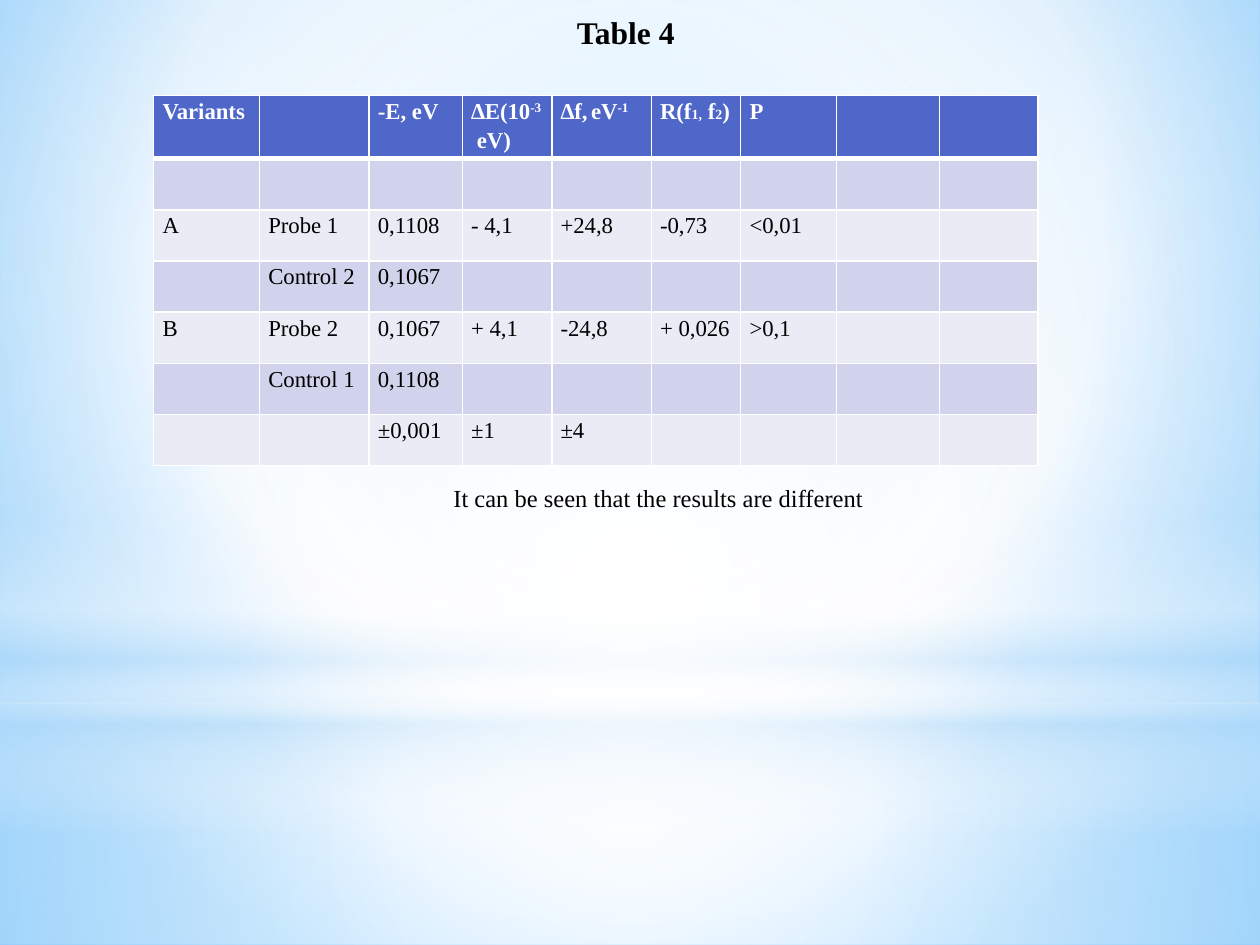
from lxml import etree
from pptx import Presentation
from pptx.dml.color import RGBColor
from pptx.enum.shapes import MSO_SHAPE
from pptx.enum.text import MSO_ANCHOR, PP_ALIGN
from pptx.oxml.ns import qn
from pptx.util import Inches, Pt

RECT, OVAL = MSO_SHAPE.RECTANGLE, MSO_SHAPE.OVAL
MIDDLE, BOTTOM = MSO_ANCHOR.MIDDLE, MSO_ANCHOR.BOTTOM
JUSTIFY = PP_ALIGN.JUSTIFY

TITLE = "Table 4"
NOTE = "It can be seen that the results are different"
# A cell is a string, or a list of (text, style) runs.
HEAD = [
    "Variants", "", "-E, eV",
    [("∆E(10", "head"), ("-3 ", "sup"), (" eV)", "head")],
    [("∆f,", "head"), (" ", "sub"), ("eV", "head"), ("-1", "sup")],
    [("R(f", "head"), ("1,", "sub"), (" f", "head"), ("2", "sub"), (")", "head")],
    "P", "", "",
]
ROWS = [
    [],
    ["A", "Probe 1", "0,1108", "- 4,1", "+24,8", "-0,73", "<0,01"],
    ["", "Control 2", "0,1067"],
    ["B", "Probe 2", "0,1067", "+ 4,1", "-24,8", "+ 0,026", ">0,1"],
    ["", "Control 1", "0,1108"],
    ["", "", "±0,001", "±1", "±4"],
]
COLS = [0.84, 0.87, 0.74, 0.71, 0.79, 0.71, 0.76, 0.82, 0.78]
LEFT, TOP, HIGH, HEAD_H = 1.22, 0.76, 2.93, 0.49

FONT = "Times New Roman"
WHITE, BLACK, SKY = "FFFFFF", "000000", "B4DCFA"
THEME = {
    "head_fill": "4E67C8",
    "bands": ["D0D3EB", "E9EBF5"],
    "line": WHITE,
    "text": {
        "title": (BLACK, {"name": FONT, "size": Pt(18), "bold": True}),
        "note": (BLACK, {"name": FONT, "size": Pt(14), "bold": False}),
        "head": (WHITE, {"name": FONT, "size": Pt(13), "bold": True}),
        "sup": (WHITE, {"name": FONT, "size": Pt(13), "bold": True}),
        "sub": (WHITE, {"name": FONT, "size": Pt(8), "bold": True}),
        "body": (BLACK, {"name": FONT, "size": Pt(13), "bold": False}),
    },
}

# Gradient stops are (position %, colour, opacity %).
BACK = [(0, "9ED5FF", 100), (60, WHITE, 100), (100, "5BB9FF", 100)]
MID = (50, 50, 50, 50)
LAYERS = [
    (RECT, (0, 5.58, 10, 1.92), [(0, WHITE, 91), (37, WHITE, 76), (100, SKY, 79)], MID),
    (RECT, (0, 0, 10, 5.58), [(0, WHITE, 89), (48, WHITE, 62), (100, SKY, 79)], MID),
    (RECT, (0, 4.12, 10, 2.5), [(0, WHITE, 0), (29, WHITE, 30), (45, SKY, 40),
                                (55, WHITE, 26), (65, SKY, 60), (100, WHITE, 0)], None),
    (OVAL, (0, 1.75, 10, 5.58), [(0, WHITE, 100), (56, WHITE, 0)], MID),
]


def add(node, tag, **attrs):
    return etree.SubElement(node, qn(tag), {k: str(v) for k, v in attrs.items()})


def blend(fill, node, stops, focus):
    """Fill node with a circular gradient, or a vertical one without focus."""
    fill.solid()
    grad = etree.Element(qn("a:gradFill"), rotWithShape="1")
    items = add(grad, "a:gsLst")
    for pos, color, alpha in stops:
        stop = add(items, "a:gs", pos=pos * 1000)
        add(add(stop, "a:srgbClr", val=color), "a:alpha", val=alpha * 1000)
    if focus:
        sides = {side: part * 1000 for side, part in zip("ltrb", focus)}
        add(add(grad, "a:path", path="circle"), "a:fillToRect", **sides)
    else:
        add(grad, "a:lin", ang=90 * 60000, scaled=0)
    node.replace(node.find(qn("a:solidFill")), grad)


def write(para, runs):
    para.alignment = JUSTIFY
    for text, style in runs:
        run = para.add_run()
        run.text = text
        color, values = THEME["text"][style]
        for name, value in values.items():
            setattr(run.font, name, value)
        run.font.color.rgb = RGBColor.from_string(color)
        if style == "sup":
            run.font._element.set("baseline", "30000")


def label(slide, box, text, style, anchor):
    frame = slide.shapes.add_textbox(*map(Inches, box)).text_frame
    frame.word_wrap = True
    frame.vertical_anchor = anchor
    write(frame.paragraphs[0], [(text, style)])
    return frame.paragraphs[0]


def edge(cell, widths):
    """Draw the borders, with widths in points for left, right, top, bottom."""
    props = cell._tc.get_or_add_tcPr()
    for spot, (side, width) in enumerate(zip("LRTB", widths)):
        line = etree.Element(qn("a:ln" + side), w=str(Pt(width)))
        add(add(line, "a:solidFill"), "a:srgbClr", val=THEME["line"])
        props.insert(spot, line)


def grid(slide):
    rows = [HEAD] + ROWS
    frame = slide.shapes.add_table(len(rows), len(COLS), Inches(LEFT), Inches(TOP),
                                   Inches(sum(COLS)), Inches(HIGH))
    table = frame.table
    for col, width in zip(table.columns, COLS):
        col.width = Inches(width)
    row_h = (HIGH - HEAD_H) / len(ROWS)
    for r, row in enumerate(rows):
        table.rows[r].height = Inches(row_h if r else HEAD_H)
        color = THEME["bands"][(r - 1) % 2] if r else THEME["head_fill"]
        for c in range(len(COLS)):
            cell = table.cell(r, c)
            cell.fill.solid()
            cell.fill.fore_color.rgb = RGBColor.from_string(color)
            edge(cell, (1, 1, 3 if r == 1 else 1, 1 if r else 3))
            value = row[c] if c < len(row) else ""
            if not value:
                continue
            cell.margin_left = cell.margin_right = Inches(0.07)
            cell.margin_top = cell.margin_bottom = 0
            if isinstance(value, str):
                value = [(value, "body" if r else "head")]
            para = cell.text_frame.paragraphs[0]
            para.line_spacing = 1.15
            write(para, value)


def main():
    deck = Presentation()
    deck.slide_width, deck.slide_height = Inches(10), Inches(7.5)
    slide = deck.slides.add_slide(deck.slide_layouts[6])
    fill = slide.background.fill
    fill.solid()
    blend(fill, slide.element.find(".//" + qn("p:bgPr")), BACK, (20, 10, 20, 60))
    for kind, box, stops, focus in LAYERS:
        shape = slide.shapes.add_shape(kind, *map(Inches, box))
        shape.shadow.inherit = False
        shape.line.fill.background()
        blend(shape.fill, shape._element.spPr, stops, focus)
    label(slide, (4.48, 0.05, 1.05, 0.4), TITLE, "title", MIDDLE)
    grid(slide)
    note = label(slide, (3.01, 3.55, 3.98, 0.57), NOTE, "note", BOTTOM)
    note._p.get_or_add_pPr().set("indent", str(Inches(0.49)))
    deck.save("out.pptx")


if __name__ == "__main__":
    main()
